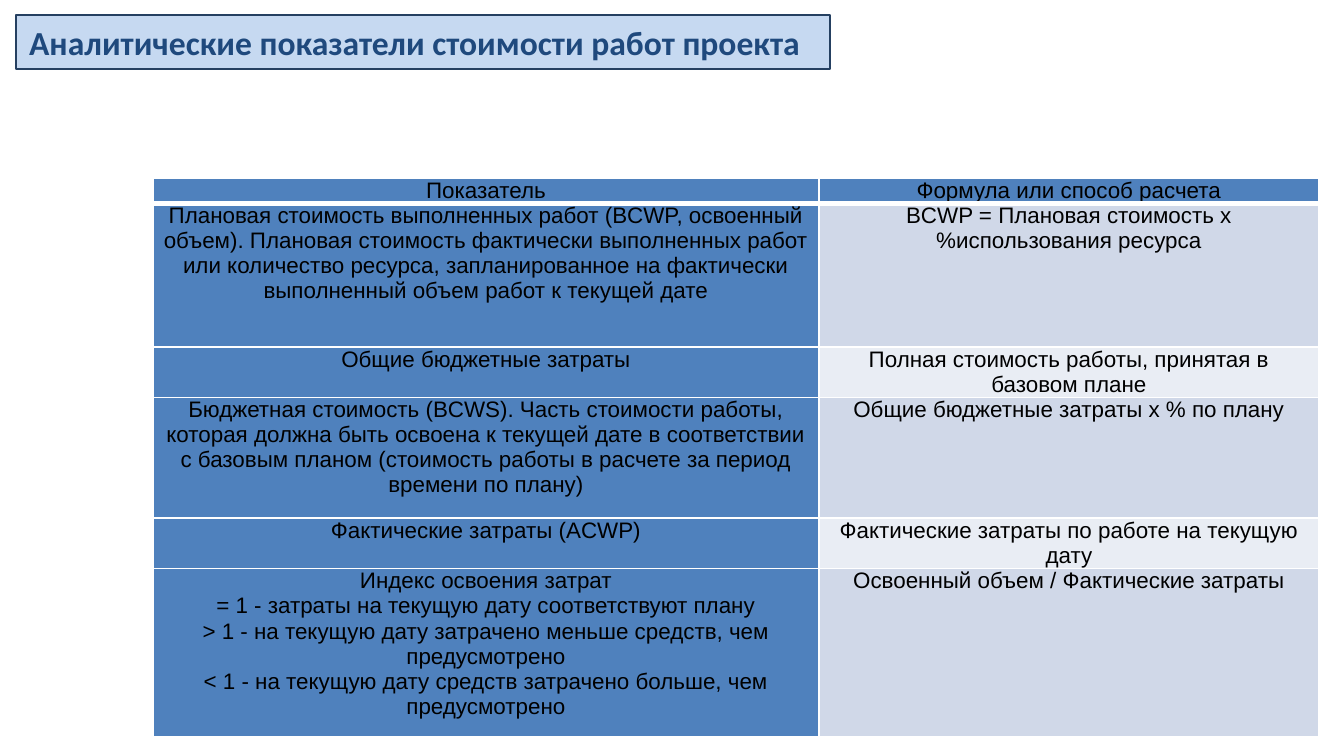
from lxml import etree
from pptx import Presentation
from pptx.dml.color import RGBColor
from pptx.enum.shapes import MSO_SHAPE
from pptx.enum.text import MSO_ANCHOR, PP_ALIGN
from pptx.oxml.ns import qn
from pptx.util import Pt

RECTANGLE = MSO_SHAPE.RECTANGLE
LEFT, CENTER = PP_ALIGN.LEFT, PP_ALIGN.CENTER
TOP, MIDDLE = MSO_ANCHOR.TOP, MSO_ANCHOR.MIDDLE

TITLE = "Аналитические показатели стоимости работ проекта"
HEADER = ("Показатель", "Формула или способ расчета")
INDICATORS = [
    ("Плановая стоимость выполненных работ (BCWP, освоенный объем). "
     "Плановая стоимость фактически выполненных работ или количество ресурса, "
     "запланированное на фактически выполненный объем работ к текущей дате",
     "BCWP = Плановая стоимость х %использования ресурса"),
    ("Общие бюджетные затраты",
     "Полная стоимость работы, принятая в базовом плане"),
    ("Бюджетная стоимость (BCWS). Часть стоимости работы, которая должна быть "
     "освоена к текущей дате в соответствии с базовым планом (стоимость работы "
     "в расчете за период времени по плану)",
     "Общие бюджетные затраты х % по плану"),
    ("Фактические затраты (ACWP)",
     "Фактические затраты по работе на текущую дату"),
    ("Индекс освоения затрат\n"
     "= 1 - затраты на текущую дату соответствуют плану\n"
     "> 1 - на текущую дату затрачено меньше средств, чем предусмотрено\n"
     "< 1 - на текущую дату средств затрачено больше, чем предусмотрено",
     "Освоенный объем / Фактические затраты"),
]
COLORS = {
    "black": "000000", "border": "FFFFFF", "accent": "4F81BD",
    "odd": "D0D8E8", "even": "E9EDF4",
    "title_fill": "C6D9F1", "title_line": "254061", "title_text": "1F497D",
}
SLIDE_SIZE = (1344, 756)
TITLE_BOX = (16, 15, 814, 54)
TABLE_ORIGIN = (153, 178)
COLUMN_WIDTHS = (666, 500)
ROW_HEIGHTS = (24, 144, 48, 121, 48, 168)
CELL_MARGIN = 5


def px(value):
    return round(value * 914400 / 134.4)


def color(name):
    return RGBColor.from_string(COLORS[name])


def format_text(frame, font_name, size, color_name, alignment, bold=False):
    for para in frame.paragraphs:
        para.alignment = alignment
        for span in para.runs:
            span.font.name = font_name
            span.font.size = Pt(size)
            span.font.bold = bold
            span.font.color.rgb = color(color_name)


def add_borders(cell, bottom_width):
    properties = cell._tc.get_or_add_tcPr()
    for side, width in (("L", 1), ("R", 1), ("T", 1), ("B", bottom_width)):
        line = etree.SubElement(properties, qn("a:ln" + side), w=str(Pt(width)))
        fill = etree.SubElement(line, qn("a:solidFill"))
        etree.SubElement(fill, qn("a:srgbClr"), val=COLORS["border"])


def add_title(page):
    box = page.shapes.add_shape(RECTANGLE, *map(px, TITLE_BOX))
    box.shadow.inherit = False
    box.fill.solid()
    box.fill.fore_color.rgb = color("title_fill")
    box.line.color.rgb = color("title_line")
    box.line.width = Pt(0.75)
    frame = box.text_frame
    frame.word_wrap = True
    frame.vertical_anchor = MIDDLE
    frame.text = TITLE
    format_text(frame, "Calibri", 18, "title_text", LEFT, bold=True)


def add_indicator_table(page):
    rows = [HEADER, *INDICATORS]
    size = (sum(COLUMN_WIDTHS), sum(ROW_HEIGHTS))
    table = page.shapes.add_table(
        len(rows), len(HEADER), *map(px, TABLE_ORIGIN + size)).table
    for column, width in zip(table.columns, COLUMN_WIDTHS):
        column.width = px(width)
    for row, height in zip(table.rows, ROW_HEIGHTS):
        row.height = px(height)
    for row_index, texts in enumerate(rows):
        for column_index, text in enumerate(texts):
            cell = table.cell(row_index, column_index)
            cell.margin_left = cell.margin_right = px(CELL_MARGIN)
            cell.margin_top = cell.margin_bottom = 0
            cell.vertical_anchor = TOP
            add_borders(cell, 3 if row_index == 0 else 1)
            if row_index == 0 or column_index == 0:
                fill_name = "accent"
            else:
                fill_name = "odd" if row_index % 2 else "even"
            cell.fill.solid()
            cell.fill.fore_color.rgb = color(fill_name)
            cell.text_frame.text = text
            format_text(cell.text_frame, "Arial", 12, "black", CENTER)


def main():
    deck = Presentation()
    deck.slide_width, deck.slide_height = map(px, SLIDE_SIZE)
    page = deck.slides.add_slide(deck.slide_layouts[6])
    add_indicator_table(page)
    add_title(page)
    deck.save("out.pptx")


if __name__ == "__main__":
    main()
